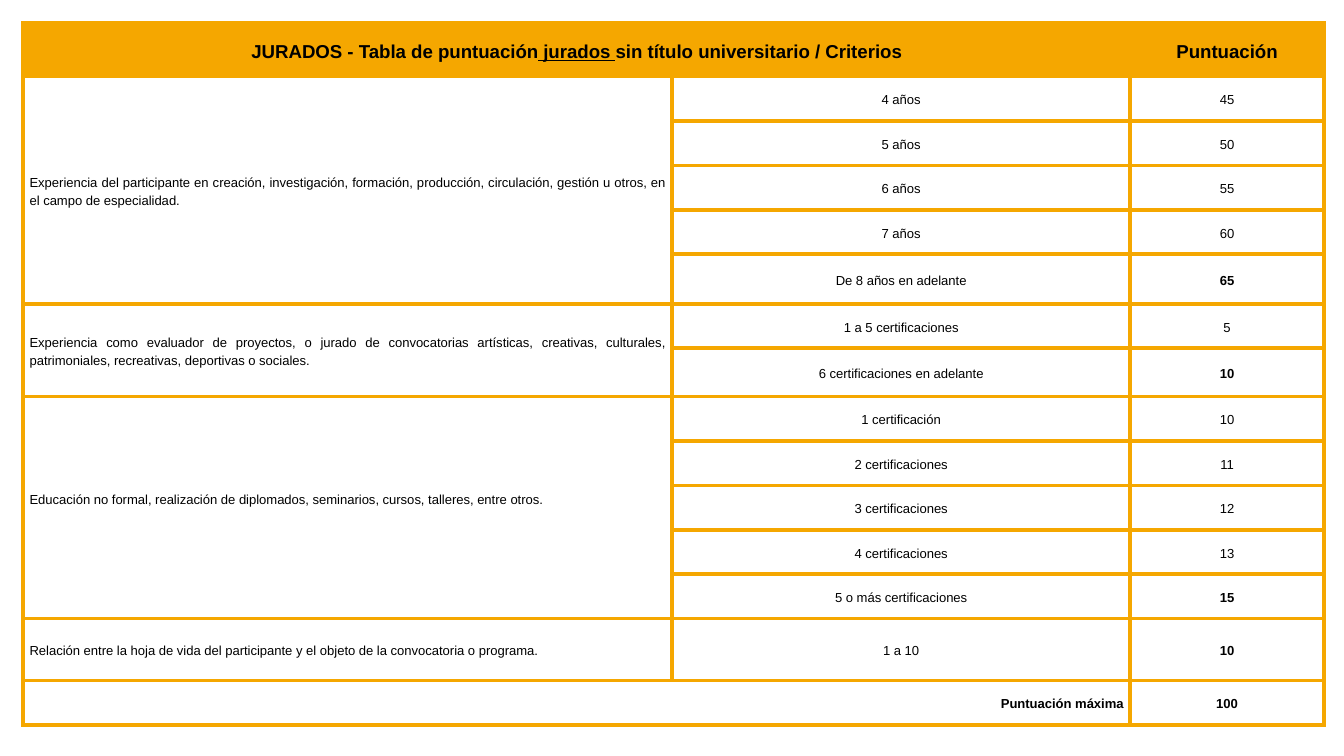
from lxml import etree
from pptx import Presentation
from pptx import util as u
from pptx.dml.color import RGBColor
from pptx.enum import text
from pptx.oxml.ns import qn

THEME = dict(font="Arial", ink="000000", accent="F5A700", paper="FFFFFF",
             head=10, body=7, border=2.25)
HEADER = [("JURADOS - Tabla de puntuación", False), (" jurados ", True),
          ("sin título universitario / Criterios", False)]
SCORE = "Puntuación"
GROUPS = [
    ("Experiencia del participante en creación, investigación, formación, producción, "
     "circulación, gestión u otros, en el campo de especialidad.",
     [("4 años", "45"), ("5 años", "50"), ("6 años", "55"), ("7 años", "60"),
      ("De 8 años en adelante", "65")]),
    ("Experiencia como evaluador de proyectos, o jurado de convocatorias artísticas, "
     "creativas, culturales, patrimoniales, recreativas, deportivas o sociales.",
     [("1 a 5 certificaciones", "5"), ("6 certificaciones en adelante", "10")]),
    ("Educación no formal, realización de diplomados, seminarios, cursos, talleres, "
     "entre otros.",
     [("1 certificación", "10"), ("2 certificaciones", "11"), ("3 certificaciones", "12"),
      ("4 certificaciones", "13"), ("5 o más certificaciones", "15")]),
    ("Relación entre la hoja de vida del participante y el objeto de la convocatoria "
     "o programa.", [("1 a 10", "10")]),
]
TOTAL = ("Puntuación máxima", "100")
COLS = [4.83, 3.41, 1.44]
ROW = 0.33
TALL_ROWS = {0: 0.4, 5: 0.37, 7: 0.36, 13: 0.46}
LEFT = TOP = 0.17
LIFTED_GROUP = 2
ALIGN = text.PP_ALIGN


def add_borders(cell):
    tcPr = cell._tc.get_or_add_tcPr()
    for i, side in enumerate(("lnL", "lnR", "lnT", "lnB")):
        ln = etree.Element(qn("a:" + side), w=str(u.Pt(THEME["border"])))
        fill = etree.SubElement(ln, qn("a:solidFill"))
        etree.SubElement(fill, qn("a:srgbClr"), val=THEME["accent"])
        tcPr.insert(i, ln)


def write(cell, runs, align=ALIGN.CENTER, size="body", bold=False):
    p = cell.text_frame.paragraphs[0]
    p.alignment = align
    p.line_spacing = 1.2
    for words, underline in runs:
        r = p.add_run()
        r.text = words
        r.font.name = THEME["font"]
        r.font.size = u.Pt(THEME[size])
        r.font.bold = bold
        r.font.underline = underline
        r.font.color.rgb = RGBColor.from_string(THEME["ink"])


def plain(words):
    return [(words, False)]


def main():
    prs = Presentation()
    prs.slide_width = u.Inches(10)
    prs.slide_height = prs.slide_width * 9 // 16
    s = prs.slides.add_slide(prs.slide_layouts[6])

    n = 2 + sum(len(levels) for _, levels in GROUPS)
    heights = [TALL_ROWS.get(i, ROW) for i in range(n)]
    table = s.shapes.add_table(n, len(COLS), u.Inches(LEFT), u.Inches(TOP),
                               u.Inches(sum(COLS)), u.Inches(sum(heights))).table
    for col, width in zip(table.columns, COLS):
        col.width = u.Inches(width)
    for i, (row, height) in enumerate(zip(table.rows, heights)):
        row.height = u.Inches(height)
        for cell in row.cells:
            cell.margin_left = cell.margin_right = u.Inches(0.05)
            cell.margin_top = cell.margin_bottom = u.Inches(0.1)
            cell.vertical_anchor = text.MSO_ANCHOR.MIDDLE
            cell.fill.solid()
            cell.fill.fore_color.rgb = RGBColor.from_string(THEME["paper" if i else "accent"])
            add_borders(cell)

    for i in (0, n - 1):
        table.cell(i, 0).merge(table.cell(i, 1))
    write(table.cell(0, 0), HEADER, size="head", bold=True)
    write(table.cell(0, 2), plain(SCORE), size="head", bold=True)

    top = 1
    for g, (criterion, levels) in enumerate(GROUPS):
        last = top + len(levels) - 1
        cell = table.cell(top, 0)
        if last > top:
            cell.merge(table.cell(last, 0))
        if g == LIFTED_GROUP:
            cell.margin_bottom = u.Inches(0.23)
        write(cell, plain(criterion), ALIGN.JUSTIFY)
        for i, (level, points) in enumerate(levels, top):
            write(table.cell(i, 1), plain(level))
            write(table.cell(i, 2), plain(points), bold=i == last)
        top = last + 1

    write(table.cell(top, 0), plain(TOTAL[0]), ALIGN.RIGHT, bold=True)
    write(table.cell(top, 2), plain(TOTAL[1]), bold=True)
    prs.save("out.pptx")


if __name__ == "__main__":
    main()
